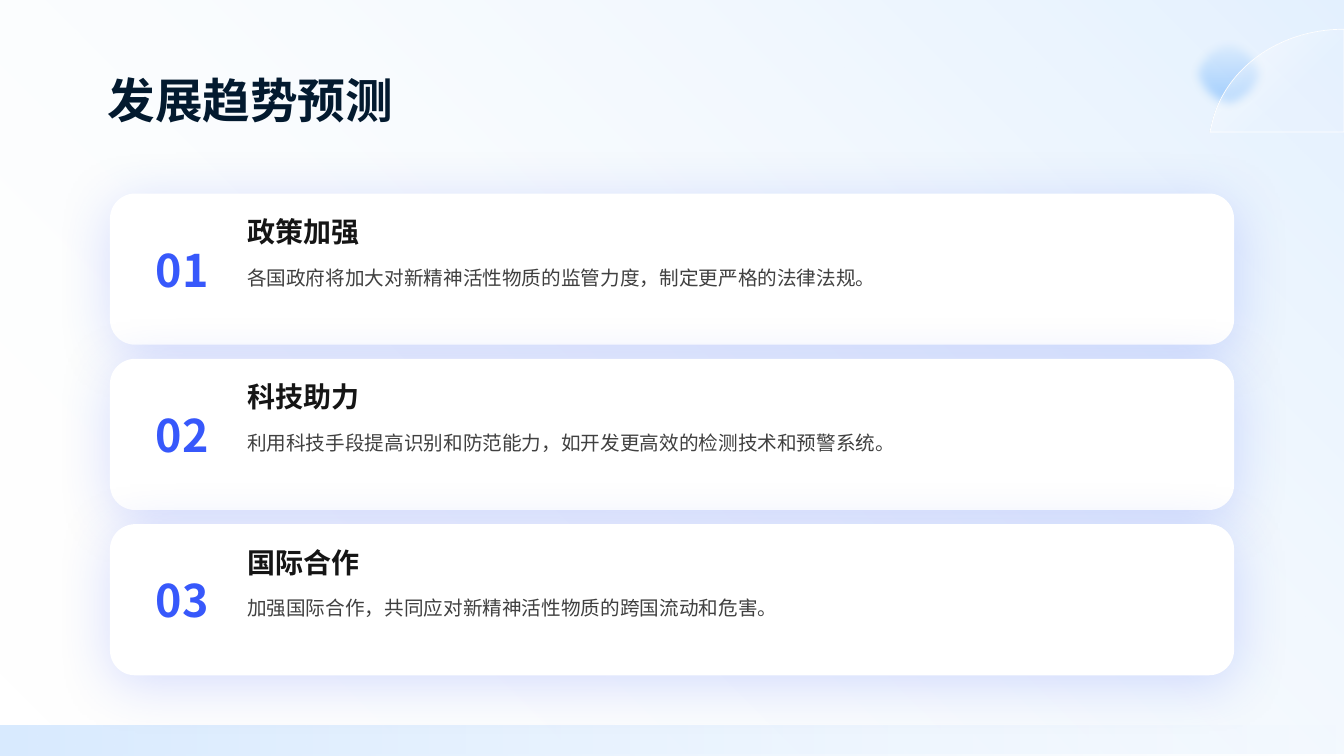
from lxml import etree
from pptx import Presentation
from pptx.dml.color import RGBColor
from pptx.enum.shapes import MSO_SHAPE
from pptx.enum.text import MSO_ANCHOR, PP_ALIGN
from pptx.oxml.ns import qn
from pptx.util import Inches, Pt

RECT, OVAL, ROUNDED = MSO_SHAPE.RECTANGLE, MSO_SHAPE.OVAL, MSO_SHAPE.ROUNDED_RECTANGLE
TOP, MIDDLE, BOTTOM = MSO_ANCHOR.TOP, MSO_ANCHOR.MIDDLE, MSO_ANCHOR.BOTTOM
LEFT, CENTER, JUSTIFY = PP_ALIGN.LEFT, PP_ALIGN.CENTER, PP_ALIGN.JUSTIFY

TRENDS = [
    ("政策加强", "各国政府将加大对新精神活性物质的监管力度，制定更严格的法律法规。"),
    ("科技助力", "利用科技手段提高识别和防范能力，如开发更高效的检测技术和预警系统。"),
    ("国际合作", "加强国际合作，共同应对新精神活性物质的跨国流动和危害。"),
]


def rgb(value):
    return RGBColor.from_string(value)


def add_child(parent, tag, **attributes):
    values = {name: str(value) for name, value in attributes.items()}
    return etree.SubElement(parent, qn(tag), values)


def set_alpha(color, percent):
    add_child(color, "a:alpha", val=percent * 1000)


def curve_points(start, control1, control2, end, steps=40):
    """Points along a cubic curve, without its start."""
    for step in range(1, steps + 1):
        t = step / steps
        weights = ((1 - t) ** 3, 3 * t * (1 - t) ** 2, 3 * t * t * (1 - t), t ** 3)
        corners = (start, control1, control2, end)
        yield tuple(sum(w * c[axis] for w, c in zip(weights, corners)) for axis in (0, 1))


class TrendSlide:
    FONT = "Noto Sans CJK SC"
    BLUE, NAVY, BLACK, GRAY, WHITE = "3758FB", "031A2F", "151515", "404040", "FFFFFF"
    SKY, PALE = "419BFD", "D9EBFF"

    def __init__(self, presentation):
        self.slide = presentation.slides.add_slide(presentation.slide_layouts[6])

    def shape(self, kind, *box):
        shape = self.slide.shapes.add_shape(kind, *map(Inches, box))
        shape.shadow.inherit = False
        shape.line.fill.background()
        return shape

    def gradient(self, shape, stops, angle):
        """Stops are (position, colour, opacity), all but the angle in percent."""
        shape.fill.gradient()
        shape.fill.gradient_angle = angle
        for stop, (position, color, _) in zip(shape.fill.gradient_stops, stops):
            stop.position = position / 100
            stop.color.rgb = rgb(color)
        colors = shape._element.spPr.xpath("./a:gradFill//a:srgbClr")
        for color, (_, _, opacity) in zip(colors, stops):
            set_alpha(color, opacity)

    def soft_edge(self, shape, radius):
        effects = shape._element.spPr.find(qn("a:effectLst"))
        add_child(effects, "a:softEdge", rad=Inches(radius))

    def card(self, *box):
        card = self.shape(ROUNDED, *box)
        card.fill.solid()
        card.fill.fore_color.rgb = rgb(self.WHITE)
        effects = card._element.spPr.find(qn("a:effectLst"))
        shadow = add_child(effects, "a:outerShdw", blurRad=Pt(40), dist=Pt(6),
                           dir=90 * 60000, algn="t", rotWithShape=0)
        set_alpha(add_child(shadow, "a:srgbClr", val=self.BLUE), 20)

    def outline(self, points):
        builder = self.slide.shapes.build_freeform(
            Inches(points[0][0]), Inches(points[0][1]))
        builder.add_line_segments([(Inches(x), Inches(y)) for x, y in points[1:]])
        outline = builder.convert_to_shape()
        outline.shadow.inherit = False
        outline.line.color.rgb = rgb(self.WHITE)
        outline.line.width = Pt(0.5)
        return outline

    def text(self, words, box, size, color, bold=True, font=FONT, anchor=MIDDLE,
             align=LEFT, spacing=None, inset=True, wrap=True):
        frame = self.slide.shapes.add_textbox(*map(Inches, box)).text_frame
        frame.word_wrap = wrap
        frame.vertical_anchor = anchor
        if not inset:
            frame.margin_left = frame.margin_right = 0
            frame.margin_top = frame.margin_bottom = 0
        paragraph = frame.paragraphs[0]
        paragraph.text = words
        paragraph.alignment = align
        paragraph.line_spacing = spacing
        paragraph.font.size = Pt(size)
        paragraph.font.bold = bold
        paragraph.font.color.rgb = rgb(color)
        paragraph.font.name = font
        # East Asian typeface
        add_child(paragraph._p.xpath("./a:pPr/a:defRPr")[0], "a:ea", typeface=self.FONT)


def main():
    presentation = Presentation()
    presentation.slide_width, presentation.slide_height = Inches(13.33), Inches(7.5)
    page = TrendSlide(presentation)

    # Background
    backdrop = page.shape(RECT, 0, 0, 13.33, 7.48)
    page.gradient(backdrop, [(0, page.WHITE, 0), (100, page.SKY, 15)], 45)

    # Corner decoration
    glow = page.shape(OVAL, 11.78, 0.32, 0.81, 0.81)
    page.gradient(glow, [(0, page.SKY, 0), (100, page.SKY, 50)], 270)
    page.soft_edge(glow, 0.1)
    arc = curve_points((12.02, 1.23), (12.14, 0.69), (12.68, 0.29), (13.33, 0.29))
    dome = page.outline([(13.33, 0.29), (13.33, 1.31), (12, 1.31), (12.02, 1.23), *arc])
    page.gradient(dome, [(39, page.WHITE, 5), (83, page.WHITE, 50)], 135)

    # Footer band
    footer = page.shape(RECT, 0, 7.2, 13.33, 0.3)
    page.gradient(footer, [(0, page.PALE, 0), (100, page.PALE, 100)], 180)

    # Title
    page.text("发展趋势预测", (0.97, 0.36, 11.39, 0.96), 34, page.NAVY,
              font="Arial", anchor=BOTTOM, spacing=1.5)

    # Trend cards
    for index, (heading, detail) in enumerate(TRENDS):
        top = 1.92 + 1.64 * index
        page.card(1.09, top, 11.15, 1.5)
        page.text(f"{index + 1:02}", (1.33, top + 0.44, 0.96, 0.62), 32, page.BLUE,
                  align=CENTER, wrap=False)
        page.text(detail, (2.45, top + 0.6, 9.28, 0.77), 14, page.GRAY, bold=False,
                  anchor=TOP, align=JUSTIFY, spacing=1.5, inset=False)
        page.text(heading, (2.45, top + 0.15, 9.28, 0.45), 20, page.BLACK, inset=False)

    presentation.save("out.pptx")


if __name__ == "__main__":
    main()
